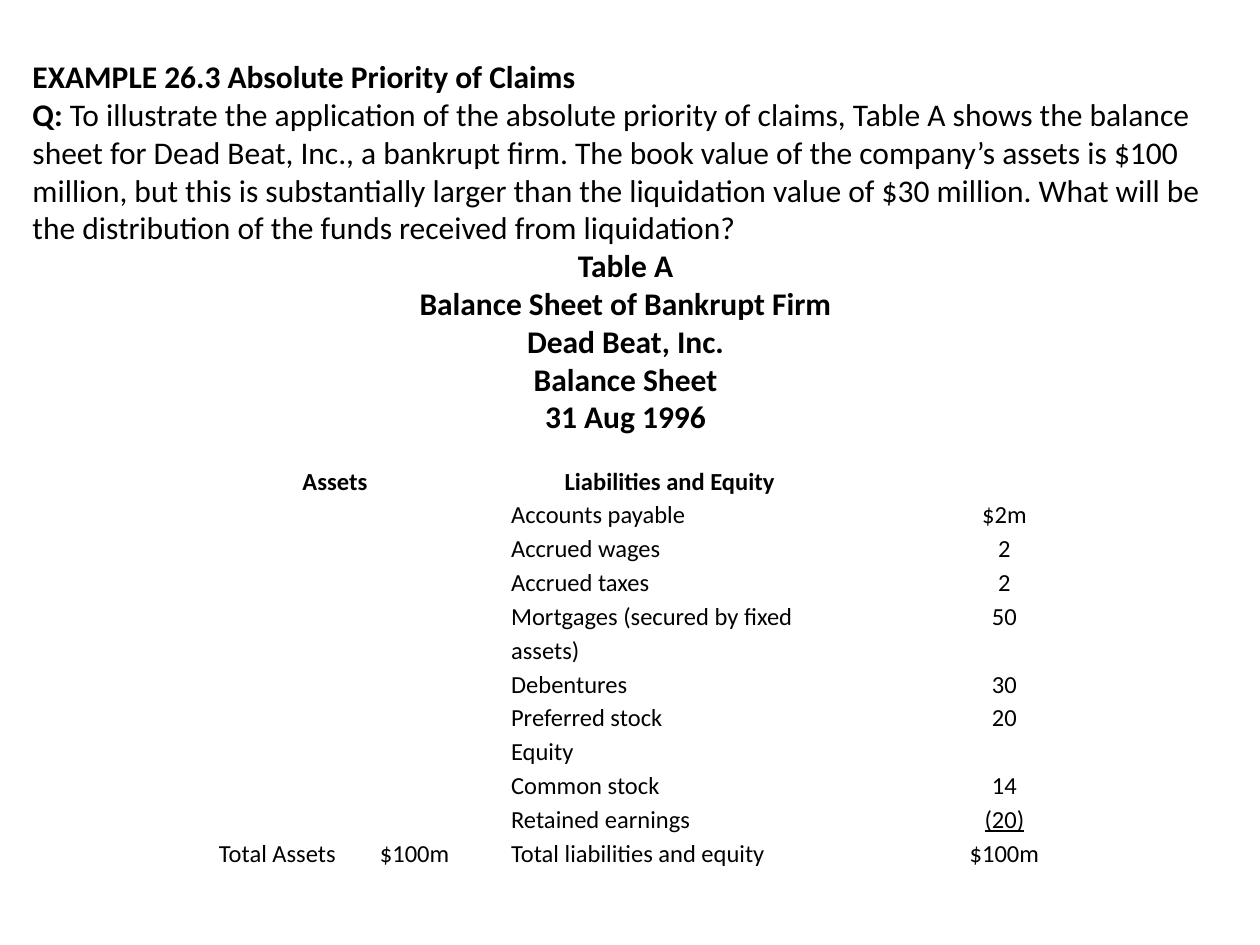
from lxml import etree
from pptx import Presentation
from pptx.dml.color import RGBColor
from pptx.enum.text import MSO_ANCHOR, PP_ALIGN
from pptx.oxml.ns import qn
from pptx.util import Pt

LEFT, CENTER = PP_ALIGN.LEFT, PP_ALIGN.CENTER
MIDDLE = MSO_ANCHOR.MIDDLE
FONT, BLACK = "Calibri", "000000"

TITLE = "EXAMPLE 26.3 Absolute Priority of Claims"
QUESTION = (
    " To illustrate the application of the absolute priority of claims, Table A "
    "shows the balance sheet for Dead Beat, Inc., a bankrupt firm. The book value "
    "of the company’s assets is $100 million, but this is substantially larger "
    "than the liquidation value of $30 million. What will be the distribution of "
    "the funds received from liquidation?"
)
CAPTION = ("Table A\nBalance Sheet of Bankrupt Firm\nDead Beat, Inc.\n"
           "Balance Sheet\n31 Aug 1996")
ROWS = [
    ("Assets", "Liabilities and Equity", ""),
    ("", "Accounts payable", "$2m"),
    ("", "Accrued wages", "2"),
    ("", "Accrued taxes", "2"),
    ("", "Mortgages (secured by fixed assets)", "50"),
    ("", "Debentures", "30"),
    ("", "Preferred stock", "20"),
    ("", "Equity", ""),
    ("", "Common stock", "14"),
    ("", "Retained earnings", "(20)"),
    ("Total Assets\t$100m", "Total liabilities and equity", "$100m"),
]


def color(value):
    return RGBColor.from_string(value)


def style(r, size, bold=False):
    r.font.name, r.font.size, r.font.bold = FONT, Pt(size), bold
    r.font.color.rgb = color(BLACK)


def add_intro(s, x, y, w, h):
    """Example heading, question and table caption."""
    tf = s.shapes.add_textbox(Pt(x), Pt(y), Pt(w), Pt(h)).text_frame
    tf.word_wrap = True
    tf.vertical_anchor = MIDDLE
    tf.text = TITLE
    question = tf.add_paragraph()
    question.text = "Q:"
    caption = tf.add_paragraph()
    caption.text = CAPTION
    caption.alignment = CENTER
    for p in tf.paragraphs:
        for r in p.runs:
            style(r, 18, bold=True)
    r = question.add_run()
    r.text = QUESTION
    style(r, 18)


def fill_cell(cell, text, bold, align):
    cell.fill.background()
    cell.margin_left = cell.margin_right = Pt(5)
    cell.margin_top = cell.margin_bottom = 0
    p = cell.text_frame.paragraphs[0]
    p.text = text
    p.alignment = align
    p.line_spacing = 1.15
    for r in p.runs:
        style(r, 14, bold)
    if not text:
        # Keep empty cells as low as the filled ones
        etree.SubElement(p._p, qn("a:endParaRPr"), sz="1400")


def set_tab(cell, indent, pos):
    """Indent the cell and line its second part up at a tab stop."""
    cell.margin_left = Pt(indent)
    p_pr = cell.text_frame.paragraphs[0]._p.get_or_add_pPr()
    tabs = etree.SubElement(p_pr, qn("a:tabLst"))
    etree.SubElement(tabs, qn("a:tab"), pos=str(Pt(pos)), algn="l")


def add_balance_sheet(s, x, y, w, h):
    """Assets on the left, liabilities and amounts on the right."""
    n = len(ROWS)
    line_h = h / (n + 1)  # one row wraps to two lines
    table = s.shapes.add_table(n, 3, Pt(x), Pt(y), Pt(w), Pt(h)).table
    table.first_row = table.horz_banding = False
    for i, row in enumerate(ROWS):
        table.rows[i].height = Pt(line_h)
        for j, text in enumerate(row):
            align = LEFT if j == 1 and i > 0 else CENTER
            fill_cell(table.cell(i, j), text, i == 0, align)

    # Underlined last amount and the tabbed total
    table.cell(n - 2, 2).text_frame.paragraphs[0].runs[0].font.underline = True
    total = table.cell(n - 1, 0)
    total.text_frame.paragraphs[0].alignment = LEFT
    set_tab(total, 29.3, 92)


def main():
    prs = Presentation()
    prs.slide_width, prs.slide_height = Pt(720), Pt(540)
    s = prs.slides.add_slide(prs.slide_layouts[6])
    add_intro(s, 11.5, 28, 692, 225.4)
    add_balance_sheet(s, 95.8, 264.2, 573.8, 231.8)
    prs.save("out.pptx")


if __name__ == "__main__":
    main()
